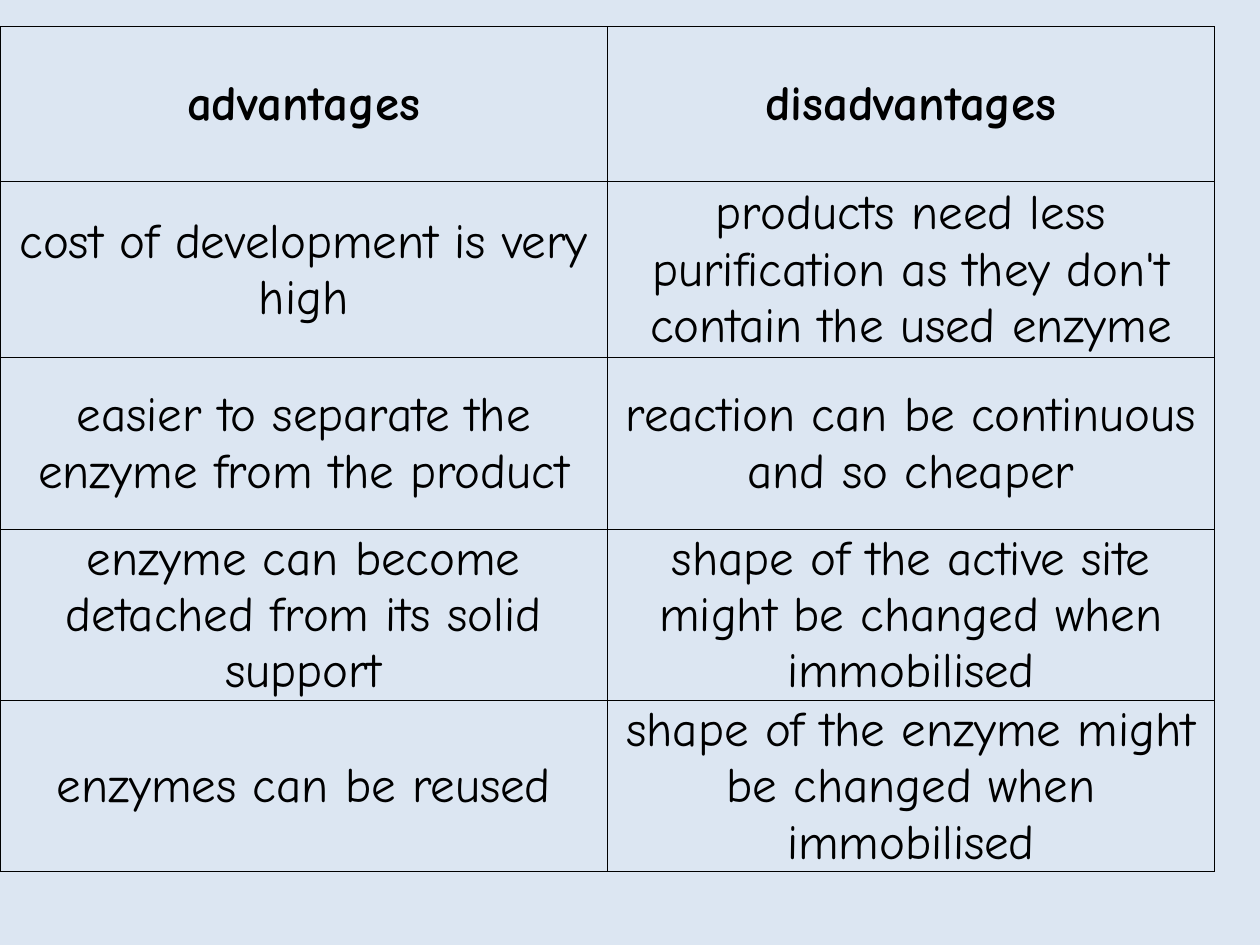
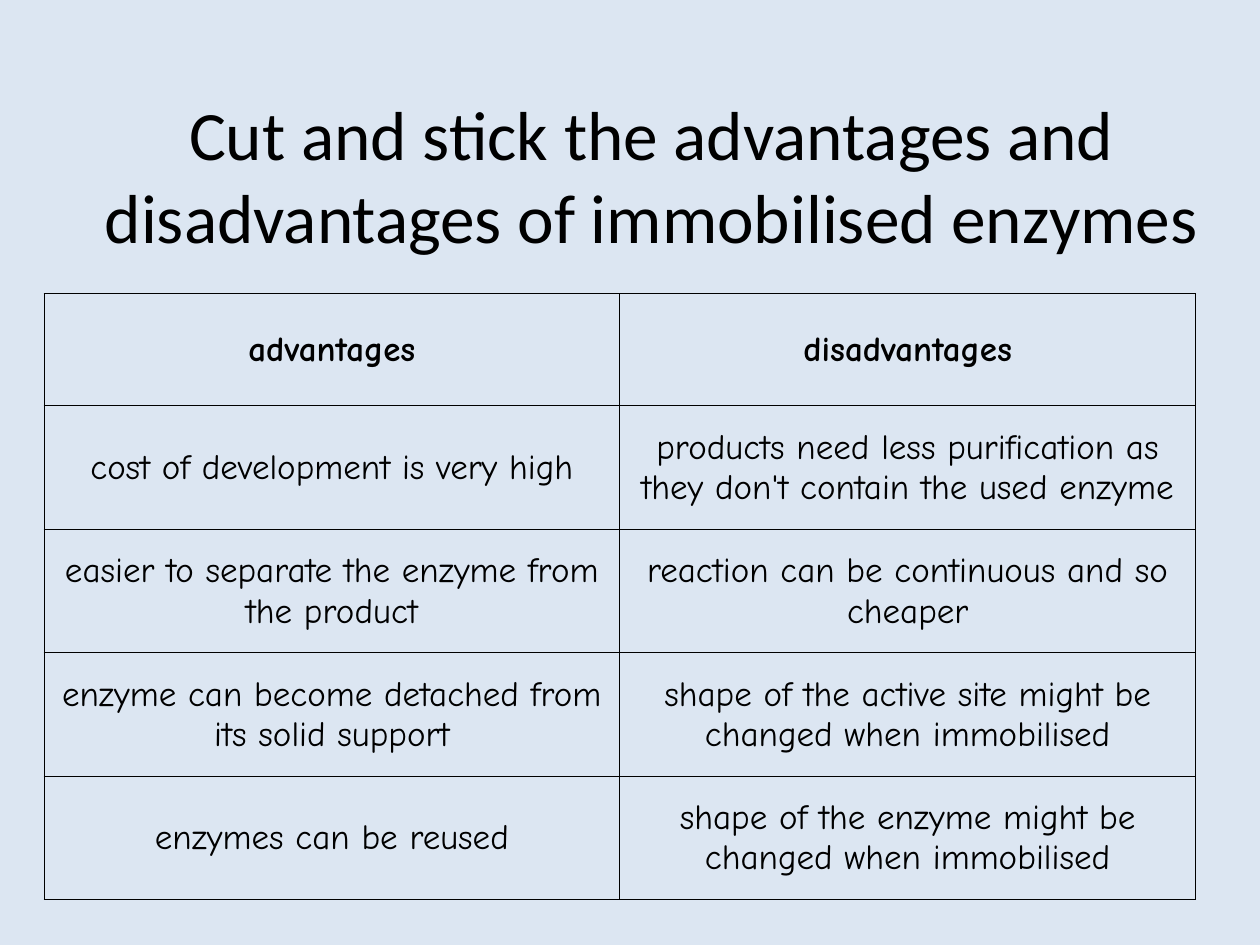
from lxml.etree import SubElement
from pptx import Presentation
from pptx.dml.color import RGBColor
from pptx.enum.text import MSO_ANCHOR, MSO_AUTO_SIZE, PP_ALIGN
from pptx.oxml.ns import qn
from pptx.util import Inches, Pt

PALE_BLUE = RGBColor(0xDC, 0xE6, 0xF2)
BLACK = RGBColor(0, 0, 0)
TITLE_FONT = "Calibri"
TABLE_FONT = "Comic Neue"
BORDER_WIDTH = Pt(0.5)

STATEMENTS = [
    ("advantages", "disadvantages"),
    ("cost of development is very high",
     "products need less purification as they don't contain the used enzyme"),
    ("easier to separate the enzyme from the product",
     "reaction can be continuous and so cheaper"),
    ("enzyme can become detached from its solid support",
     "shape of the active site might be changed when immobilised"),
    ("enzymes can be reused",
     "shape of the enzyme might be changed when immobilised"),
]


def add_borders(cell):
    properties = cell._tc.get_or_add_tcPr()
    for side in ("lnL", "lnR", "lnT", "lnB"):
        line = SubElement(properties, qn(f"a:{side}"), w=str(BORDER_WIDTH))
        fill = SubElement(line, qn("a:solidFill"))
        SubElement(fill, qn("a:srgbClr"), val=str(BLACK))


def add_statement_table(slide, left, top, column_width, row_heights, font_size):
    table = slide.shapes.add_table(
        len(STATEMENTS), 2, Inches(left), Inches(top),
        Inches(2 * column_width), Inches(sum(row_heights))).table
    for column in table.columns:
        column.width = Inches(column_width)
    for row_index, (statements, height) in enumerate(zip(STATEMENTS, row_heights)):
        table.rows[row_index].height = Inches(height)
        for column_index, statement in enumerate(statements):
            cell = table.cell(row_index, column_index)
            add_borders(cell)
            cell.fill.background()
            cell.vertical_anchor = MSO_ANCHOR.MIDDLE
            cell.margin_left = cell.margin_right = cell.margin_top = Inches(0.01)
            cell.margin_bottom = 0
            cell.text = statement
            paragraph = cell.text_frame.paragraphs[0]
            paragraph.alignment = PP_ALIGN.CENTER
            paragraph.font.name = TABLE_FONT
            paragraph.font.size = Pt(font_size)
            paragraph.font.bold = row_index == 0
            paragraph.font.color.rgb = BLACK


presentation = Presentation()
presentation.slide_width = Inches(10)
presentation.slide_height = Inches(7.5)
background = presentation.slide_master.background.fill
background.solid()
background.fore_color.rgb = PALE_BLUE
title_only_layout = presentation.slide_layouts[5]
blank_layout = presentation.slide_layouts[6]

# Large table for cutting out
cards_slide = presentation.slides.add_slide(blank_layout)
add_statement_table(cards_slide, 0, 0.21, 4.82, [1.23, 1.4] + [1.36] * 3, 28)

# Task with the smaller table
task_slide = presentation.slides.add_slide(title_only_layout)
title = task_slide.shapes.title
title.left, title.top = Inches(0.67), Inches(0.76)
title.width, title.height = Inches(9), Inches(1.25)
title.text = "Cut and stick the advantages and disadvantages of immobilised enzymes"
title.text_frame.auto_size = MSO_AUTO_SIZE.NONE
title.text_frame.vertical_anchor = MSO_ANCHOR.MIDDLE
paragraph = title.text_frame.paragraphs[0]
paragraph.alignment = PP_ALIGN.CENTER
paragraph.font.name = TITLE_FONT
paragraph.font.size = Pt(39.6)
paragraph.font.color.rgb = BLACK
add_statement_table(task_slide, 0.35, 2.33, 4.57, [0.89] + [0.98] * 4, 20)

presentation.save("out.pptx")
